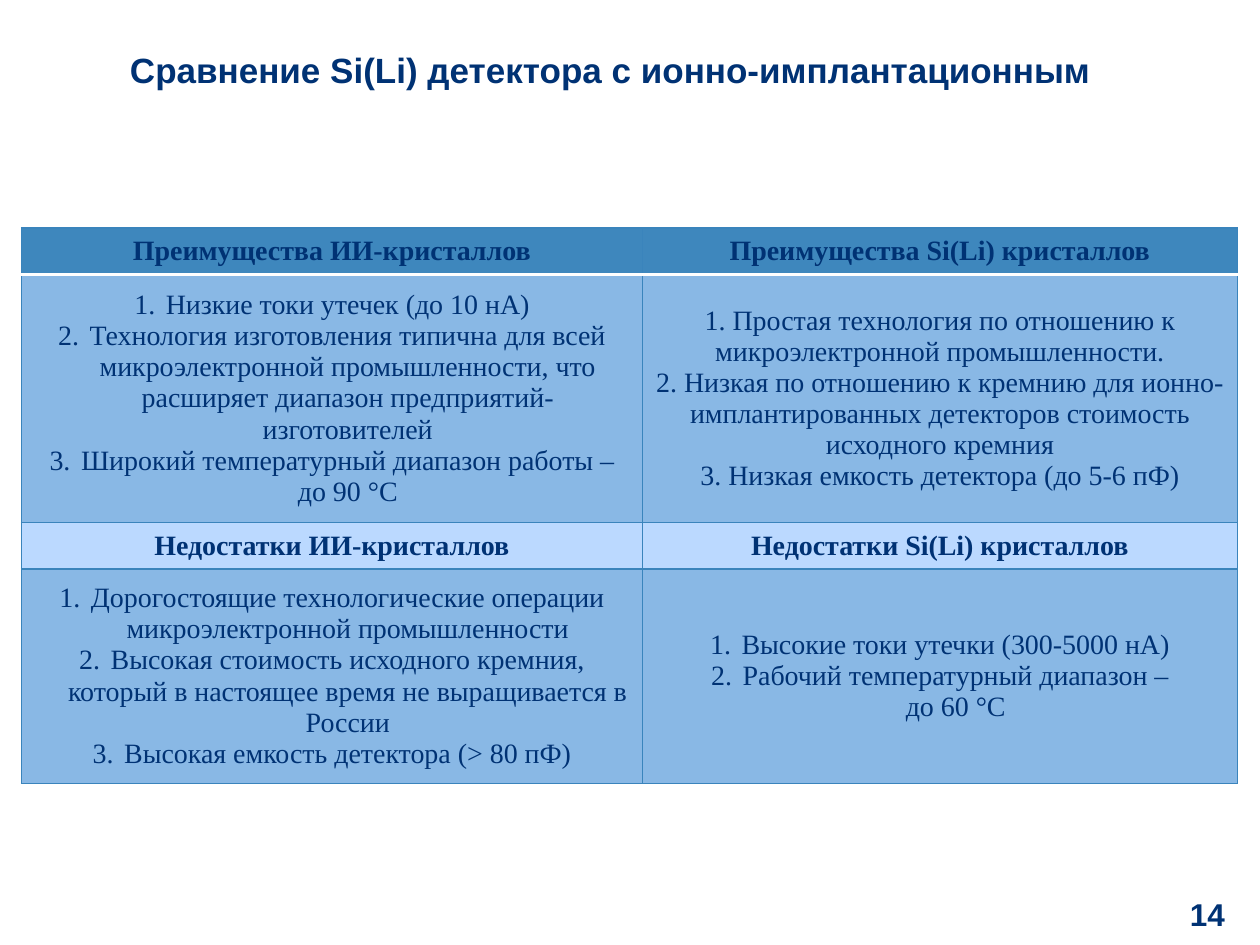
from dataclasses import dataclass

from lxml.etree import SubElement
from pptx import Presentation
from pptx.dml.color import RGBColor
from pptx.enum.text import MSO_ANCHOR, PP_ALIGN
from pptx.oxml.ns import qn
from pptx.util import Inches, Pt


@dataclass(frozen=True)
class Theme:
    ink: str = "003274"
    header: str = "3E87BD"
    body: str = "89B8E5"
    subheader: str = "BBD9FF"
    border: str = "3A84BC"
    divider: str = "FFFFFF"
    heading_font: str = "Arial"
    table_font: str = "Times New Roman"
    title_size: int = 20
    number_size: int = 18
    table_size: int = 16


THEME = Theme()
COLUMN_WIDTHS = (4.93, 4.72)
ROW_HEIGHTS = (0.37, 1.96, 0.37, 1.7)

ADVANTAGES = (
    ("Низкие токи утечек (до 10 нА)",
     "Технология изготовления типична для всей микроэлектронной промышленности, "
     "что расширяет диапазон предприятий-изготовителей",
     "Широкий температурный диапазон работы – до 90 °С"),
    ("1. Простая технология по отношению к микроэлектронной промышленности.",
     "2. Низкая по отношению к кремнию для ионно-имплантированных детекторов "
     "стоимость исходного кремния",
     "3. Низкая емкость детектора (до 5-6 пФ)"),
)
DRAWBACKS = (
    ("Дорогостоящие технологические операции микроэлектронной промышленности",
     "Высокая стоимость исходного кремния, который в настоящее время "
     "не выращивается в России",
     "Высокая емкость детектора (> 80 пФ)"),
    ("Высокие токи утечки (300-5000 нА)",
     "Рабочий температурный диапазон –\vдо 60 °С"),
)
# Each row: cell contents, fill, bold, and which columns number automatically
ROWS = (
    ((("Преимущества ИИ-кристаллов",), ("Преимущества Si(Li) кристаллов",)),
     THEME.header, True, (False, False)),
    (ADVANTAGES, THEME.body, False, (True, False)),
    ((("Недостатки ИИ-кристаллов",), ("Недостатки Si(Li) кристаллов",)),
     THEME.subheader, True, (False, False)),
    (DRAWBACKS, THEME.body, False, (True, True)),
)


def number_paragraph(paragraph):
    """Give a paragraph an automatic number with a hanging indent."""
    properties = paragraph._p.get_or_add_pPr()
    properties.set("marL", str(Inches(0.25)))
    properties.set("indent", str(-Inches(0.25)))
    SubElement(properties, qn("a:buFont"), typeface="+mj-lt")
    SubElement(properties, qn("a:buAutoNum"), type="arabicPeriod")


def write_text(text_frame, *lines, font=THEME.table_font, size=THEME.table_size,
               bold=False, align=PP_ALIGN.CENTER, numbered=False, spacing=None):
    text_frame.word_wrap = True
    for index, line in enumerate(lines):
        paragraph = text_frame.add_paragraph() if index else text_frame.paragraphs[0]
        paragraph.alignment = align
        if spacing:
            paragraph.line_spacing = spacing
        if numbered:
            number_paragraph(paragraph)
        for part_index, part in enumerate(line.split("\v")):
            if part_index:
                paragraph.add_line_break()
            run = paragraph.add_run()
            run.text = part
            run.font.name = font
            run.font.size = Pt(size)
            run.font.bold = bold
            run.font.color.rgb = RGBColor.from_string(THEME.ink)


def add_text_box(slide, left, top, width, height, text, margin=None, **text_format):
    shape = slide.shapes.add_textbox(*map(Inches, (left, top, width, height)))
    text_frame = shape.text_frame
    text_frame.vertical_anchor = MSO_ANCHOR.MIDDLE
    if margin is not None:
        text_frame.margin_left = text_frame.margin_right = margin
        text_frame.margin_top = text_frame.margin_bottom = margin
    write_text(text_frame, text, **text_format)


def set_borders(cell, top, bottom):
    """Draw the four cell edges; top and bottom are (colour, points)."""
    side = (THEME.border, 0.75)
    properties = cell._tc.get_or_add_tcPr()
    edges = (("lnL", side), ("lnR", side), ("lnT", top), ("lnB", bottom))
    for position, (tag, (colour, width)) in enumerate(edges):
        line = SubElement(properties, qn(f"a:{tag}"), w=str(Pt(width)))
        fill = SubElement(line, qn("a:solidFill"))
        SubElement(fill, qn("a:srgbClr"), val=colour)
        properties.insert(position, line)


def add_comparison_table(slide, left, top):
    frame = slide.shapes.add_table(
        len(ROW_HEIGHTS), len(COLUMN_WIDTHS), Inches(left), Inches(top),
        Inches(sum(COLUMN_WIDTHS)), Inches(sum(ROW_HEIGHTS)))
    table = frame.table
    table.first_row = table.horz_banding = False
    for column, width in zip(table.columns, COLUMN_WIDTHS):
        column.width = Inches(width)
    thin, divider = (THEME.border, 0.75), (THEME.divider, 2)
    for row_index, (contents, fill, bold, numbering) in enumerate(ROWS):
        table.rows[row_index].height = Inches(ROW_HEIGHTS[row_index])
        for column_index, lines in enumerate(contents):
            cell = table.cell(row_index, column_index)
            cell.vertical_anchor = MSO_ANCHOR.MIDDLE
            cell.fill.solid()
            cell.fill.fore_color.rgb = RGBColor.from_string(fill)
            set_borders(cell, divider if row_index == 1 else thin,
                        divider if row_index == 0 else thin)
            write_text(cell.text_frame, *lines, bold=bold,
                       numbered=numbering[column_index])


def main():
    presentation = Presentation()
    presentation.slide_width, presentation.slide_height = Inches(10), Inches(7.5)
    slide = presentation.slides.add_slide(presentation.slide_layouts[6])

    # Slide number
    add_text_box(slide, 9.03, 7.05, 0.69, 0.41, "14", margin=0, bold=True,
                 font=THEME.heading_font, size=THEME.number_size,
                 align=PP_ALIGN.RIGHT)
    # Title
    add_text_box(slide, 0.65, 0.29, 8.39, 0.56,
                 "Сравнение Si(Li) детектора с ионно-имплантационным", bold=True,
                 font=THEME.heading_font, size=THEME.title_size, spacing=0.9)
    # Comparison of detector crystals
    add_comparison_table(slide, 0.17, 1.81)

    presentation.save("out.pptx")


if __name__ == "__main__":
    main()
